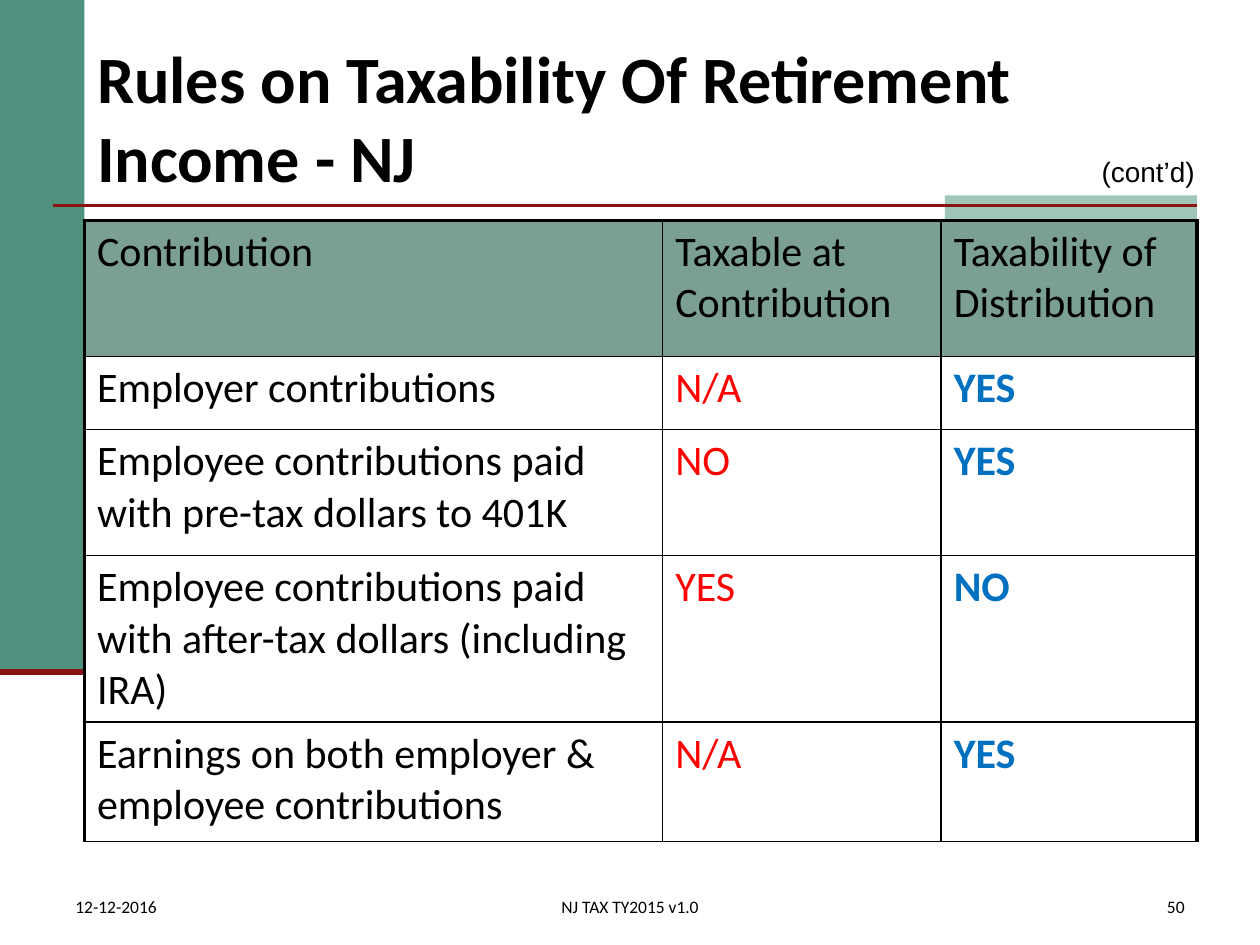
from lxml.etree import SubElement
from pptx import Presentation
from pptx.dml.color import RGBColor
from pptx.enum.shapes import MSO_CONNECTOR, MSO_SHAPE
from pptx.enum.text import MSO_ANCHOR, MSO_AUTO_SIZE, PP_ALIGN
from pptx.oxml.ns import qn
from pptx.util import Inches, Pt

TITLE = "Rules on Taxability Of Retirement Income - NJ"
HEADER = ("Contribution", "Taxable at Contribution", "Taxability of Distribution")
RULES = [
    ("Employer contributions", "N/A", "YES"),
    ("Employee contributions paid with pre-tax dollars to 401K", "NO", "YES"),
    ("Employee contributions paid with after-tax dollars (including IRA)", "YES", "NO"),
    ("Earnings on both employer & employee contributions", "N/A", "YES"),
]
COL_WIDTHS = (4.59, 2.21, 2.03)
ROW_HEIGHTS = (1.08, 0.58, 1, 1.3, 0.95)
THEME = {
    "font": "Calibri", "note_font": "Arial",
    "title": 37.8, "table": 24, "note": 16, "footer": 10,
    "text": "000000", "green": "4F917E", "mint": "A0C6BA", "rule": "891411",
    "header": "7B9F93", "contribution": "FF0000", "distribution": "0070C0",
    "outer": 2.25, "inner": 1,
}
LEFT, RIGHT = 0.67, 9.5
WIDTH = RIGHT - LEFT
TABLE_TOP = 1.75
BAR_BOTTOM = 5.33
FOOTERS = [
    ("12-12-2016", 0.5, 2.17, PP_ALIGN.LEFT),
    ("NJ TAX TY2015 v1.0", 3.31, 3.38, PP_ALIGN.CENTER),
    ("50", 7.42, 2.08, PP_ALIGN.RIGHT),
]


def write(tf, text, size, color="text", bold=False, font="font",
          align=PP_ALIGN.LEFT, anchor=MSO_ANCHOR.TOP, wrap=True):
    tf.word_wrap = wrap
    tf.vertical_anchor = anchor
    p = tf.paragraphs[0]
    p.alignment = align
    r = p.add_run()
    r.text = text
    r.font.name = THEME[font]
    r.font.size = Pt(THEME[size])
    r.font.bold = bold
    r.font.color.rgb = RGBColor.from_string(THEME[color])


def add_block(slide, x, y, w, h, color):
    sp = slide.shapes.add_shape(MSO_SHAPE.RECTANGLE, *map(Inches, (x, y, w, h)))
    sp.shadow.inherit = False
    sp.fill.solid()
    sp.fill.fore_color.rgb = RGBColor.from_string(THEME[color])
    sp.line.fill.background()


def add_rule(slide, x1, x2, y, weight):
    line = slide.shapes.add_connector(
        MSO_CONNECTOR.STRAIGHT, *map(Inches, (x1, y, x2, y)))
    line.line.color.rgb = RGBColor.from_string(THEME["rule"])
    line.line.width = Pt(weight)
    SubElement(line._element.spPr, qn("a:effectLst"))


def set_borders(cell, weights):
    tcPr = cell._tc.get_or_add_tcPr()
    for i, (side, weight) in enumerate(weights.items()):
        ln = SubElement(tcPr, qn(f"a:ln{side}"), w=str(Pt(weight)))
        fill = SubElement(ln, qn("a:solidFill"))
        SubElement(fill, qn("a:srgbClr"), val=THEME["text"])
        tcPr.remove(ln)
        tcPr.insert(i, ln)


def add_rules_table(slide):
    rows = [HEADER, *RULES]
    frame = slide.shapes.add_table(
        len(rows), len(HEADER), Inches(LEFT), Inches(TABLE_TOP),
        Inches(WIDTH), Inches(sum(ROW_HEIGHTS)))
    table = frame.table
    table.horz_banding = False
    for col, width in zip(table.columns, COL_WIDTHS):
        col.width = Inches(width)
    for row, height in zip(table.rows, ROW_HEIGHTS):
        row.height = Inches(height)
    colors = ("text", "contribution", "distribution")
    inner, outer = THEME["inner"], THEME["outer"]
    for i, row in enumerate(rows):
        for j, text in enumerate(row):
            cell = table.cell(i, j)
            write(cell.text_frame, text, "table",
                  color=colors[j] if i else "text", bold=i > 0 and j == 2)
            if i:
                cell.fill.background()
            else:
                cell.fill.solid()
                cell.fill.fore_color.rgb = RGBColor.from_string(THEME["header"])
            set_borders(cell, {
                "L": outer if j == 0 else inner,
                "R": outer if j == len(row) - 1 else inner,
                "T": outer if i == 0 else inner,
                "B": inner,
            })


def add_text(slide, text, x, y, w, h, **fmt):
    tb = slide.shapes.add_textbox(*map(Inches, (x, y, w, h)))
    write(tb.text_frame, text, **fmt)


def main():
    prs = Presentation()
    prs.slide_width, prs.slide_height = Inches(10), Inches(7.5)
    slide = prs.slides.add_slide(prs.slide_layouts[5])

    add_block(slide, 0, 0, LEFT, BAR_BOTTOM, "green")
    add_block(slide, 7.5, 1.55, 2, 0.2, "mint")
    add_rule(slide, 0.42, RIGHT, 1.63, 1.5)
    add_rule(slide, 0, LEFT, BAR_BOTTOM, 3.5)

    title = slide.shapes.title
    title.left, title.top = Inches(LEFT), Inches(0.3)
    title.width, title.height = Inches(WIDTH), Inches(1.25)
    title.text_frame.auto_size = MSO_AUTO_SIZE.NONE
    write(title.text_frame, TITLE, "title", bold=True, anchor=MSO_ANCHOR.MIDDLE)

    add_rules_table(slide)
    add_text(slide, "(cont’d)", 8.63, 1.18, 0.95, 0.37, size="note",
             font="note_font", align=PP_ALIGN.RIGHT, wrap=False)
    for text, x, w, align in FOOTERS:
        add_text(slide, text, x, 7, w, 0.33, size="footer", align=align,
                 anchor=MSO_ANCHOR.BOTTOM)
    prs.save("out.pptx")


if __name__ == "__main__":
    main()
